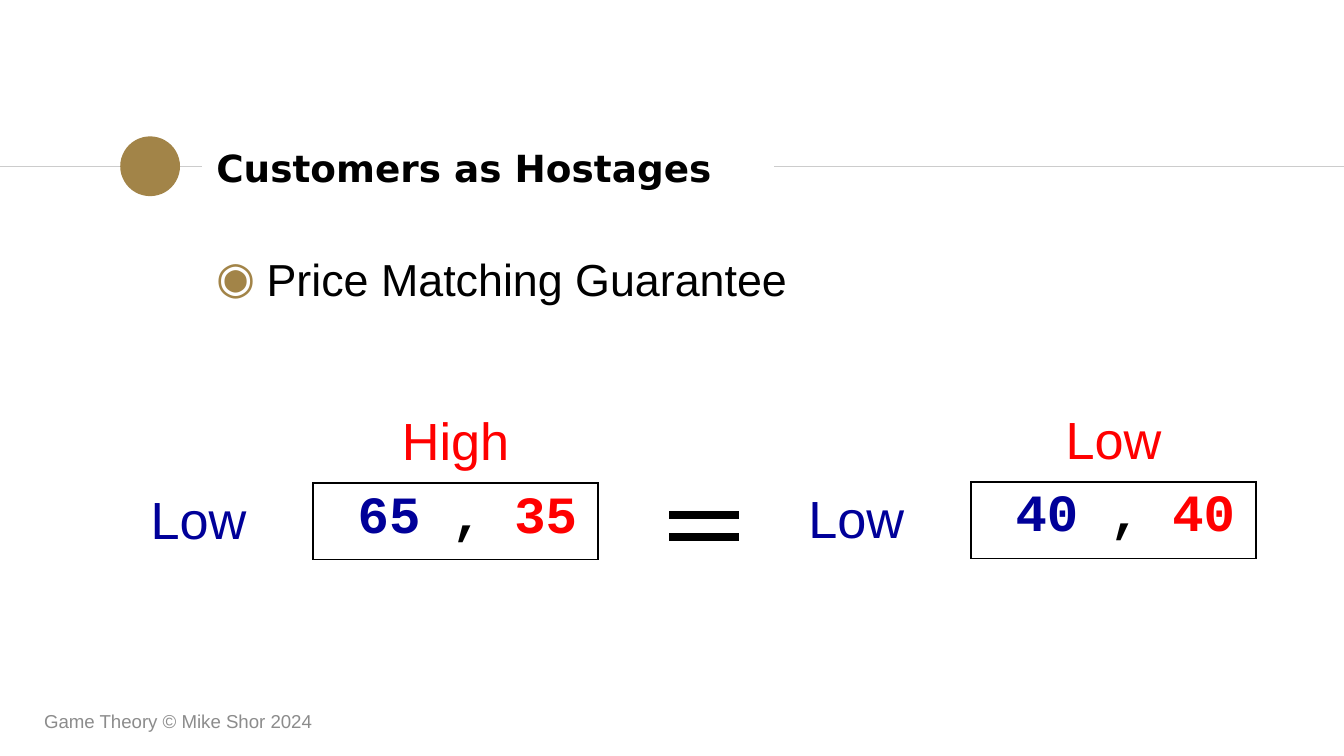
from pptx import Presentation
from pptx.dml.color import RGBColor
from pptx.enum.shapes import MSO_CONNECTOR, MSO_SHAPE
from pptx.enum.text import MSO_ANCHOR, PP_ALIGN
from pptx.oxml import parse_xml
from pptx.oxml.ns import nsdecls
from pptx.util import Pt

# Content
TITLE = "Customers as Hostages"
POINT = "Price Matching Guarantee"
FOOTER = "Game Theory © Mike Shor 2024"
GAMES = [  # left, top, column label, row label, payoffs
    (204, 605, "High", "Low", ("65", "35")),
    (1183, 603, "Low", "Low", ("40", "40")),
]
COLS, ROW = (46, 214, 424), 114
RULES = [  # left, right, height on slide, colour, weight
    (0, 301, 248, "CCCCCC", 0.75),
    (1152, 2000, 248, "CCCCCC", 0.75),
]
EQUALS = [(996, 1100, y, "000000", 4.5) for y in (766, 799)]
BLACK, GOLD, GREY, RED, BLUE = "000000", "A28448", "8C8C8C", "FF0000", "000099"
SANS, MONO, HEAD = "Arial", "Courier New", "DejaVu Sans"


def px(n):
    return n * 4572  # 200 px to the inch


def rgb(code):
    return RGBColor.from_string(code)


def place(shape, *box):
    shape.left, shape.top, shape.width, shape.height = map(px, box)


def write(para, text, size, color, font=SANS, bold=False):
    run = para.add_run()
    run.text = text
    face = run.font
    face.name, face.size, face.bold = font, Pt(size), bold
    face.color.rgb = rgb(color)


def pad(frame, inset, anchor):
    frame.margin_left = frame.margin_right = px(inset)
    frame.margin_top = frame.margin_bottom = px(inset)
    frame.word_wrap = True
    frame.vertical_anchor = anchor


def rule(left, right, y, color, weight):
    line = slide.shapes.add_connector(
        MSO_CONNECTOR.STRAIGHT, px(left), px(y), px(right), px(y))
    line.line.color.rgb = rgb(color)
    line.line.width = Pt(weight)
    line._element.spPr.append(parse_xml(f"<a:effectLst {nsdecls('a')}/>"))


def border(cell, sides):
    props = cell._tc.get_or_add_tcPr()
    for side in sides:
        props.append(parse_xml(
            f'<a:ln{side} {nsdecls("a")} w="12700"><a:solidFill>'
            f'<a:srgbClr val="{BLACK}"/></a:solidFill></a:ln{side}>'))


def game(left, top, head, row, pays):
    grid = slide.shapes.add_table(
        2, 3, px(left), px(top), px(sum(COLS)), px(2 * ROW)).table
    grid.first_row = grid.horz_banding = False
    for col, width in zip(grid.columns, COLS):
        col.width = px(width)
    for line in grid.rows:
        line.height = px(ROW)

    # Frame only the payoff cell, from both sides of each edge
    name, side, pay = grid.cell(0, 2), grid.cell(1, 0), grid.cell(1, 2)
    border(name, "B")
    border(side, "R")
    border(pay, "LRTB")
    for cell in grid.iter_cells():
        cell.fill.background()
    side.merge(grid.cell(1, 1))
    side.vertical_anchor = MSO_ANCHOR.MIDDLE

    para = name.text_frame.paragraphs[0]
    para.alignment = PP_ALIGN.CENTER
    write(para, head, 28, RED)
    write(side.text_frame.paragraphs[0], row, 28, BLUE)
    para = pay.text_frame.paragraphs[0]
    for text, color in ((" " + pays[0], BLUE), (" , ", BLACK), (pays[1], RED)):
        write(para, text, 28, color, MONO, True)


deck = Presentation()
deck.slide_width, deck.slide_height = px(2000), px(1125)
slide = deck.slides.add_slide(deck.slide_layouts[5])

# Header rules and dot
for item in RULES:
    rule(*item)
dot = slide.shapes.add_shape(MSO_SHAPE.OVAL, px(179), px(203), px(89), px(89))
dot.shadow.inherit = False
dot.fill.solid()
dot.fill.fore_color.rgb = rgb(GOLD)
dot.line.fill.background()

# Title
title = slide.shapes.title
place(title, 302, 202, 848, 96)
pad(title.text_frame, 20, MSO_ANCHOR.MIDDLE)
para = title.text_frame.paragraphs[0]
para.alignment = PP_ALIGN.LEFT
write(para, TITLE, 20, BLACK, HEAD, True)

# Bullet point
body = slide.shapes.add_textbox(px(302), px(354), px(1490), px(680))
pad(body.text_frame, 20, MSO_ANCHOR.TOP)
para = body.text_frame.paragraphs[0]
props = para._p.get_or_add_pPr()
props.set("marL", str(px(75)))
props.set("indent", str(-px(75)))
for tag in (f'buClr {nsdecls("a")}><a:srgbClr val="{GOLD}"/></a:buClr',
            f'buFont {nsdecls("a")} typeface="{SANS}"/',
            f'buChar {nsdecls("a")} char="◉"/'):
    props.append(parse_xml(f"<a:{tag}>"))
write(para, POINT, 24, BLACK)

# Footer
foot = slide.shapes.add_textbox(px(46), px(1043), px(676), px(60))
foot.text_frame.word_wrap = True
foot.text_frame.vertical_anchor = MSO_ANCHOR.MIDDLE
write(foot.text_frame.paragraphs[0], FOOTER, 10, GREY)

# Payoff tables joined by an equals sign
for item in GAMES:
    game(*item)
for item in EQUALS:
    rule(*item)

deck.save("out.pptx")
